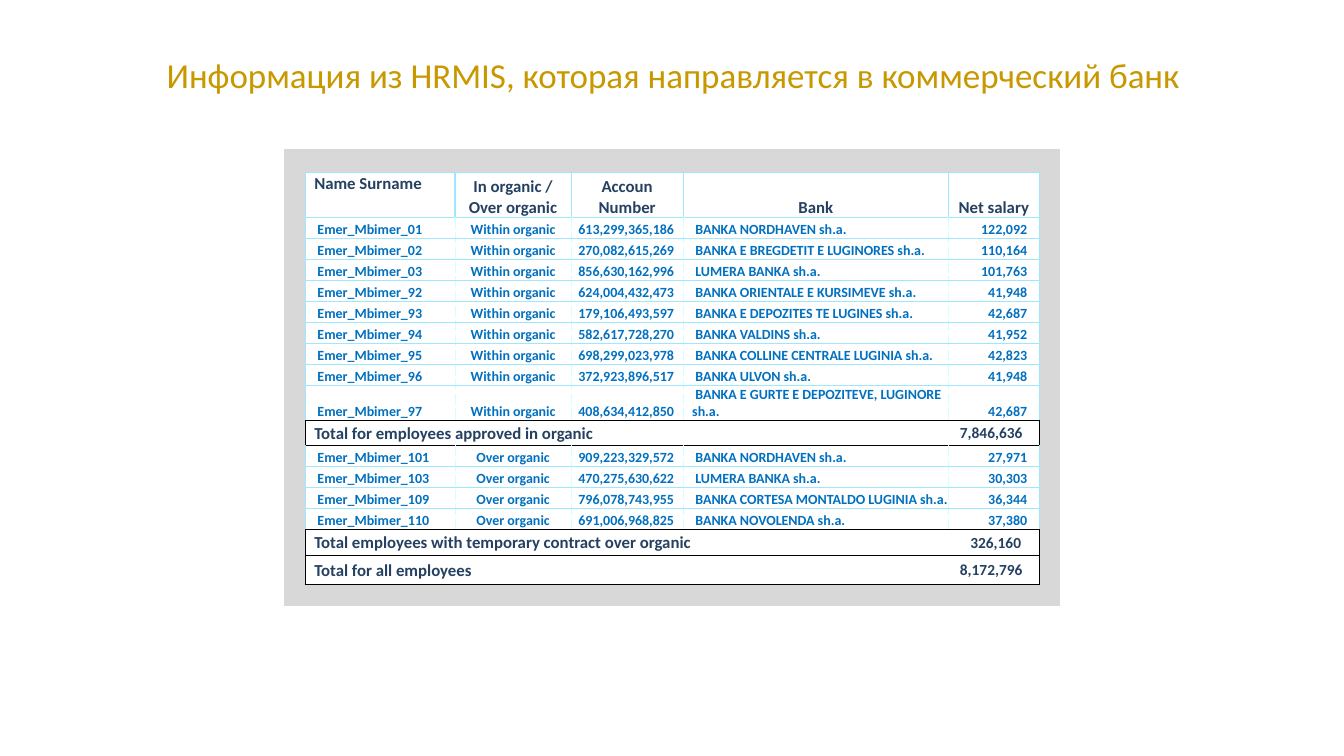
import pptx
import pptx.util
import pptx.dml.color
import pptx.enum.text
import pptx.oxml.ns
from lxml import etree

Pt = pptx.util.Pt
Align = pptx.enum.text.PP_ALIGN
Anchor = pptx.enum.text.MSO_ANCHOR
qn = pptx.oxml.ns.qn

HUES = {"gold": "C89800", "navy": "254061", "blue": "0070C0", "grey": "D8D8D8",
        "cyan": "9FE6FF", "pale": "D2FFFF", "black": "000000"}

HEADS = ["Name Surname", "In organic / Over organic", "Accoun Number", "Bank", "Net salary"]
WITHIN = [
    ("01", "613,299,365,186", "BANKA NORDHAVEN sh.a.", "122,092"),
    ("02", "270,082,615,269", "BANKA E BREGDETIT E LUGINORES sh.a.", "110,164"),
    ("03", "856,630,162,996", "LUMERA BANKA sh.a.", "101,763"),
    ("92", "624,004,432,473", "BANKA ORIENTALE E KURSIMEVE sh.a.", "41,948"),
    ("93", "179,106,493,597", "BANKA E DEPOZITES TE LUGINES sh.a.", "42,687"),
    ("94", "582,617,728,270", "BANKA VALDINS sh.a.", "41,952"),
    ("95", "698,299,023,978", "BANKA COLLINE CENTRALE LUGINIA sh.a.", "42,823"),
    ("96", "372,923,896,517", "BANKA ULVON sh.a.", "41,948"),
    ("97", "408,634,412,850", "BANKA E GURTE E DEPOZITEVE, LUGINORE sh.a.", "42,687"),
]
OVER = [
    ("101", "909,223,329,572", "BANKA NORDHAVEN sh.a.", "27,971"),
    ("103", "470,275,630,622", "LUMERA BANKA sh.a.", "30,303"),
    ("109", "796,078,743,955", "BANKA CORTESA MONTALDO LUGINIA sh.a.", "36,344"),
    ("110", "691,006,968,825", "BANKA NOVOLENDA sh.a.", "37,380"),
]
# row: (label, sum, last merged column, left inset of the sum)
TOTALS = {
    11: ("Total for employees approved in organic", "7,846,636", 3, 8.2),
    16: ("Total employees with temporary contract over organic", "326,160", 4, 15.6),
    17: ("Total for all employees", "8,172,796", 2, 8.2),
}
COLS = [15, 107, 83, 80, 189.5, 65, 15]
ROWS = [16.5, 32.5] + [15] * 8 + [24.5, 18] + [15] * 4 + [18.5, 21, 15.5]
FOOT = len(ROWS) - 1


def hue(name):
    return pptx.dml.color.RGBColor.from_string(HUES[name])


def write(frame, text, size=10, color="blue", bold=True, align=Align.LEFT, space=None, indent=0):
    para = frame.paragraphs[0]
    para.alignment = align
    if space:
        para.line_spacing = space
    if indent:
        para._p.get_or_add_pPr().set("indent", str(Pt(indent)))
    run = para.add_run()
    run.text = text
    run.font.name = "Calibri"
    run.font.size = Pt(size)
    run.font.bold = bold
    run.font.color.rgb = hue(color)


def inset(cell, left=0.7, right=0.7, anchor=Anchor.BOTTOM):
    cell.margin_left, cell.margin_right = Pt(left), Pt(right)
    cell.margin_top, cell.margin_bottom = Pt(0.7), 0
    cell.vertical_anchor = anchor


def across(line, col):
    """Rule on top of row number `line`, as (hue, width, dash)."""
    if not 1 <= col <= 5 or not 1 <= line <= FOOT:
        return None
    if line in TOTALS or line - 1 in TOTALS:
        return "black", 1 if line >= 17 else 0.5, "solid"
    return "cyan", 1 if line == 1 else 0.5, "solid"


def down(row, line):
    """Rule at the left of column number `line`, as (hue, width, dash)."""
    if not 1 <= row < FOOT or not 1 <= line <= 6:
        return None
    outer = line in (1, 6)
    if row in TOTALS:
        return ("black", 1 if row == 17 else 0.5, "solid") if outer else None
    if outer or row == 1:
        return "cyan", 1, "solid"
    return "pale", 0.5, "dash"


def border(cell, row, col):
    edges = [("a:lnL", down(row, col)), ("a:lnR", down(row, col + 1)),
             ("a:lnT", across(row, col)), ("a:lnB", across(row + 1, col))]
    props = cell._tc.get_or_add_tcPr()
    for spot, (tag, rule) in enumerate(edges):
        line = etree.Element(qn(tag))
        props.insert(spot, line)
        if rule is None:
            etree.SubElement(line, qn("a:noFill"))
            continue
        name, width, dash = rule
        line.set("w", str(Pt(width)))
        fill = etree.SubElement(line, qn("a:solidFill"))
        etree.SubElement(fill, qn("a:srgbClr")).set("val", HUES[name])
        etree.SubElement(line, qn("a:prstDash")).set("val", dash)


def blank(cell):
    """Keep an empty cell from stretching its row."""
    inset(cell)
    etree.SubElement(cell.text_frame.paragraphs[0]._p, qn("a:endParaRPr")).set("sz", "800")


def header(grid):
    for col, text in enumerate(HEADS, 1):
        cell = grid.cell(1, col)
        first = col == 1
        inset(cell, left=6.5 if first else 0.7, anchor=Anchor.TOP if first else Anchor.BOTTOM)
        write(cell.text_frame, text, size=12, color="navy",
              align=Align.LEFT if first else Align.CENTER)


def staff(grid, top, people, kind):
    for row, (code, account, bank, pay) in enumerate(people, top):
        parts = [
            ("Emer_Mbimer_" + code, {"left": 8.8}, {}),
            (kind, {}, {"align": Align.CENTER}),
            (account, {"left": 5.2}, {}),
            (bank, {"left": 6.5}, {"indent": 2.3}),
            (pay, {"right": 8.8}, {"align": Align.RIGHT}),
        ]
        for col, (text, pad, form) in enumerate(parts, 1):
            cell = grid.cell(row, col)
            inset(cell, **pad)
            write(cell.text_frame, text, **form)


def totals(grid):
    for row, (label, amount, last, left) in TOTALS.items():
        for col, text, size, pad in ((1, label, 12, 6.5), (5, amount, 11, left)):
            cell = grid.cell(row, col)
            inset(cell, left=pad, anchor=Anchor.MIDDLE)
            write(cell.text_frame, text, size=size, color="navy")
        grid.cell(row, 1).merge(grid.cell(row, last))


def payroll(slide, x, y):
    frame = slide.shapes.add_table(len(ROWS), len(COLS), Pt(x), Pt(y), Pt(sum(COLS)), Pt(sum(ROWS)))
    grid = frame.table
    grid.first_row = grid.horz_banding = False
    for col, width in zip(grid.columns, COLS):
        col.width = Pt(width)
    for row, height in zip(grid.rows, ROWS):
        row.height = Pt(height)
    header(grid)
    staff(grid, 2, WITHIN, "Within organic")
    staff(grid, 12, OVER, "Over organic")
    totals(grid)
    for row in range(len(ROWS)):
        for col in range(len(COLS)):
            cell = grid.cell(row, col)
            if row in (0, FOOT) or col in (0, 6):
                cell.fill.solid()
                cell.fill.fore_color.rgb = hue("grey")
            else:
                cell.fill.background()
            if not cell.text_frame.text:
                blank(cell)
            border(cell, row, col)


def title(slide, x, y, width, height):
    frame = slide.shapes.add_textbox(Pt(x), Pt(y), Pt(width), Pt(height)).text_frame
    frame.word_wrap = True
    frame.vertical_anchor = Anchor.MIDDLE
    write(frame, "Информация из HRMIS, которая направляется в коммерческий банк",
          size=25, color="gold", bold=False, align=Align.CENTER, space=0.9)


def main():
    deck = pptx.Presentation()
    deck.slide_width, deck.slide_height = Pt(960), Pt(540)
    slide = deck.slides.add_slide(deck.slide_layouts[6])
    title(slide, 25, 26.5, 911.5, 57)
    payroll(slide, 203, 106.5)
    deck.save("out.pptx")


if __name__ == "__main__":
    main()
